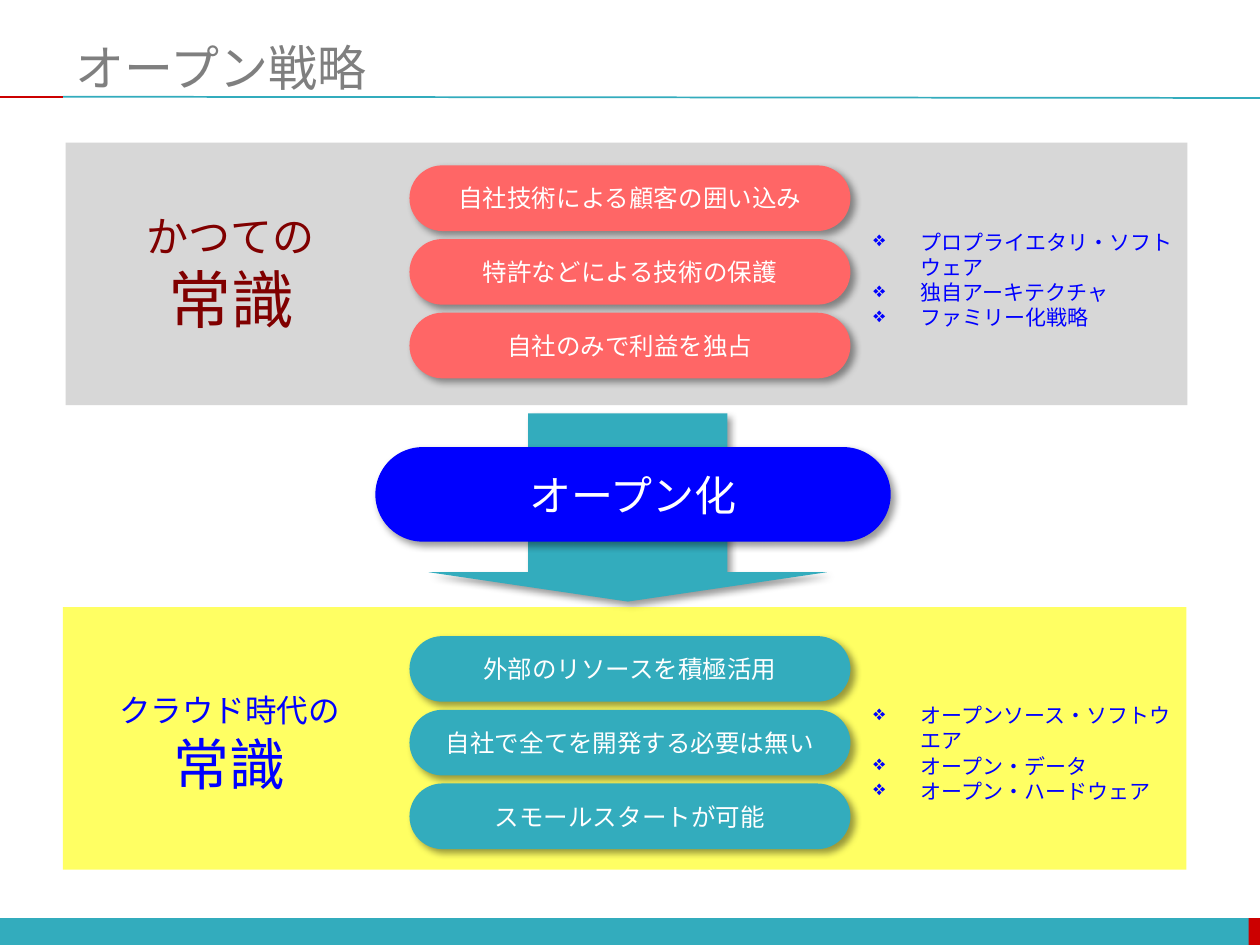
import pptx
import pptx.util
import pptx.dml.color
import pptx.enum.shapes
import pptx.enum.text
import pptx.oxml
import pptx.oxml.ns

Pt = pptx.util.Pt
qn = pptx.oxml.ns.qn
Shape = pptx.enum.shapes.MSO_SHAPE
Anchor = pptx.enum.text.MSO_ANCHOR
Align = pptx.enum.text.PP_ALIGN

TITLE = "オープン戦略"
CHANGE = "オープン化"
ERAS = [
    {
        "panel": (37.5, 81.5, 641, 150), "panel_fill": "past_panel",
        "heading": [("かつての", 24), ("常識", 36)],
        "heading_at": (69, 116.5, 126, 80), "heading_color": "past_text",
        "pills": ["自社技術による顧客の囲い込み", "特許などによる技術の保護", "自社のみで利益を独占"],
        "pill_top": 94.5, "pill_fill": "past_pill",
        "examples": ["プロプライエタリ・ソフトウェア", "独自アーキテクチャ", "ファミリー化戦略"],
        "examples_top": 127.5,
    },
    {
        "panel": (36, 347, 642, 150), "panel_fill": "now_panel",
        "heading": [("クラウド時代の", 18), ("常識", 32)],
        "heading_at": (48, 391.5, 166.5, 67.5), "heading_color": "blue",
        "pills": ["外部のリソースを積極活用", "自社で全てを開発する必要は無い", "スモールスタートが可能"],
        "pill_top": 363.5, "pill_fill": "teal",
        "examples": ["オープンソース・ソフトウエア", "オープン・データ", "オープン・ハードウェア"],
        "examples_top": 398,
    },
]
THEME = {
    "color": {
        "teal": "33ACBD", "red": "CC0000", "title": "7F7F7F", "white": "FFFFFF",
        "past_panel": "BFBFBF", "past_pill": "FF6666", "past_text": "800000",
        "now_panel": "FFFF00", "blue": "0000FF",
    },
    "size": {"title": 28, "change": 24, "pill": 14, "example": 12},
    "font": {"title": "Calibri", "shape": "Arial", "heading": "Noto Sans CJK JP"},
    "panel_alpha": 61,
    "heading_leading": 1.2,
}
PILL_LEFT, PILL_WIDTH, PILL_HEIGHT, PILL_PITCH = 234, 252, 37.5, 42.1
EXAMPLES_LEFT, EXAMPLES_WIDTH, EXAMPLES_HEIGHT = 492, 185.5, 51
BULLET_INDENT = 27


def color(name):
    return pptx.dml.color.RGBColor.from_string(THEME["color"][name])


def apply(target, values):
    for name, value in values.items():
        setattr(target, name, value)


def add_xml(parent, body):
    tag, rest = body.split(" ", 1) if " " in body else (body.rstrip("/>") + "/>", "")
    start = tag if rest else tag[:-2]
    namespace = pptx.oxml.ns.nsdecls("a")
    parent.append(pptx.oxml.parse_xml(f"{start} {namespace} {rest or '/>'}"))


def add_block(page, kind, at, fill, adjustments=(), shadow=False, alpha=None):
    block = page.shapes.add_shape(kind, *map(Pt, at))
    block.shadow.inherit = False
    block.fill.solid()
    block.fill.fore_color.rgb = color(fill)
    block.line.fill.background()
    for index, value in enumerate(adjustments):
        block.adjustments[index] = value
    properties = block._element.spPr
    if alpha:
        add_xml(properties.find(".//" + qn("a:srgbClr")), f'<a:alpha val="{alpha * 1000}"/>')
    if shadow:
        add_xml(properties.find(qn("a:effectLst")),
                '<a:outerShdw blurRad="50800" dist="38100" dir="2700000" algn="tl" rotWithShape="0">'
                '<a:srgbClr val="000000"><a:alpha val="40000"/></a:srgbClr></a:outerShdw>')
    return block


def add_rule(page, start, end, line_color):
    rule = page.shapes.add_connector(
        pptx.enum.shapes.MSO_CONNECTOR.STRAIGHT, *map(Pt, start + end))
    rule.line.color.rgb = color(line_color)
    rule.line.width = Pt(1)
    add_xml(rule._element.spPr, "<a:effectLst/>")


def write(box, lines, font, text_color, align=Align.LEFT, anchor=Anchor.TOP,
          bullet=None, leading=None):
    frame = box.text_frame
    apply(frame, {"word_wrap": True, "vertical_anchor": anchor})
    for index, (text, size) in enumerate(lines):
        para = frame.add_paragraph() if index else frame.paragraphs[0]
        para.alignment = align
        if leading:
            para.line_spacing = Pt(size * leading)
        if bullet:
            properties = para._p.get_or_add_pPr()
            properties.set("marL", str(Pt(BULLET_INDENT)))
            properties.set("indent", str(-Pt(BULLET_INDENT)))
            add_xml(properties, f'<a:buChar char="{bullet}"/>')
        span = para.add_run()
        span.text = text
        apply(span.font, {"name": THEME["font"][font], "size": Pt(size)})
        span.font.color.rgb = color(text_color)


def add_text(page, at, *args, **options):
    write(page.shapes.add_textbox(*map(Pt, at)), *args, **options)


def add_pill(page, at, fill, text, size):
    pill = add_block(page, Shape.ROUNDED_RECTANGLE, at, fill, [0.5], shadow=True)
    write(pill, [(text, THEME["size"][size])], "shape", "white", Align.CENTER, Anchor.MIDDLE)


def add_era(page, era):
    add_block(page, Shape.ROUNDED_RECTANGLE, era["panel"], era["panel_fill"], [0],
              alpha=THEME["panel_alpha"])
    for row, text in enumerate(era["pills"]):
        top = era["pill_top"] + row * PILL_PITCH
        add_pill(page, (PILL_LEFT, top, PILL_WIDTH, PILL_HEIGHT), era["pill_fill"], text, "pill")
    add_text(page, era["heading_at"], era["heading"], "heading", era["heading_color"],
             Align.CENTER, leading=THEME["heading_leading"])
    add_text(page, (EXAMPLES_LEFT, era["examples_top"], EXAMPLES_WIDTH, EXAMPLES_HEIGHT),
             [(text, THEME["size"]["example"]) for text in era["examples"]],
             "title", "blue", bullet="❖")


def main():
    deck = pptx.Presentation()
    apply(deck, {"slide_width": Pt(720), "slide_height": Pt(540)})
    page = deck.slides.add_slide(deck.slide_layouts[6])
    add_block(page, Shape.RECTANGLE, (0, 524.6, 720, 15.4), "teal")
    add_block(page, Shape.RECTANGLE, (713.5, 524.6, 6.5, 15.4), "red")
    add_rule(page, (36, 55.3), (720, 56), "teal")
    add_rule(page, (0, 55.3), (36, 55.3), "red")
    add_text(page, (36, 21.6, 684, 33.2), [(TITLE, THEME["size"]["title"])], "title", "title",
             anchor=Anchor.MIDDLE)
    add_block(page, Shape.DOWN_ARROW, (245, 236.3, 227.5, 107.5), "teal", [0.5, 0.156], shadow=True)
    for era in ERAS:
        add_era(page, era)
    add_pill(page, (214.5, 255.5, 294.5, 54), "blue", CHANGE, "change")
    deck.save("out.pptx")


if __name__ == "__main__":
    main()
